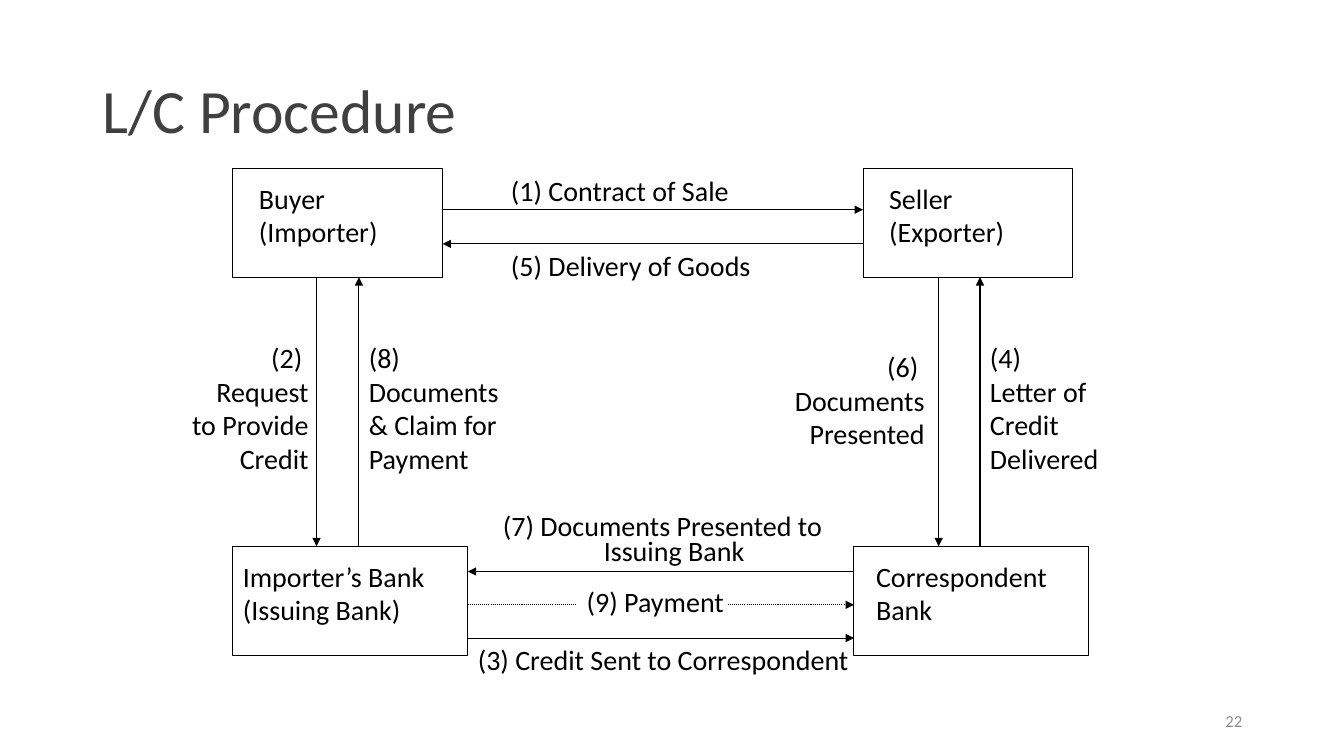
import pptx
import pptx.dml.color
import pptx.enum.dml
import pptx.enum.shapes
import pptx.enum.text
import pptx.oxml
import pptx.util
from pptx.util import Inches

FONT = "Calibri"
BLACK = "000000"
LEFT = pptx.enum.text.PP_ALIGN.LEFT
RIGHT = pptx.enum.text.PP_ALIGN.RIGHT
TOP = pptx.enum.text.MSO_ANCHOR.TOP
MIDDLE = pptx.enum.text.MSO_ANCHOR.MIDDLE

# Shared edges of the diagram, in inches
BUYER_RIGHT, SELLER_LEFT = 4.39, 8.56
ISSUER_RIGHT, CORRESPONDENT_LEFT = 4.64, 8.47
TOP_ROW, BOTTOM_ROW, PARTY_HEIGHT = 1.67, 5.42, 1.08
TOP_ROW_END = TOP_ROW + PARTY_HEIGHT

# Box left, box width, text left, text top, text width, lines
PARTIES = [
    (2.31, 2.08, TOP_ROW, 2.47, 1.39, ["Buyer", "(Importer)"]),
    (SELLER_LEFT, 2.08, TOP_ROW, 8.72, 1.35, ["Seller", "(Exporter)"]),
    (2.31, 2.33, BOTTOM_ROW, 2.31, 2.02, ["Importer’s Bank", "(Issuing Bank)"]),
    (CORRESPONDENT_LEFT, 2.33, BOTTOM_ROW, 8.59, 1.91, ["Correspondent", "Bank"]),
]

# Start x, start y, end x, end y
ARROWS = [
    (BUYER_RIGHT, 2.08, SELLER_LEFT, 2.08),
    (SELLER_LEFT, 2.42, BUYER_RIGHT, 2.42),
    (3.56, BOTTOM_ROW, 3.56, TOP_ROW_END),
    (3.14, TOP_ROW_END, 3.14, BOTTOM_ROW),
    (ISSUER_RIGHT, 6.33, CORRESPONDENT_LEFT, 6.33),
    (CORRESPONDENT_LEFT, 5.67, ISSUER_RIGHT, 5.67),
    (9.31, TOP_ROW_END, 9.31, BOTTOM_ROW),
    (9.72, BOTTOM_ROW, 9.72, TOP_ROW_END),
]

# Left, top, width, height, alignment, lines
STEPS = [
    (4.97, 1.67, 2.4, 0.43, LEFT, ["(1) Contract of Sale"]),
    (4.97, 2.42, 2.66, 0.43, LEFT, ["(5) Delivery of Goods"]),
    (4.64, 6.33, 3.92, 0.44, LEFT, ["(3) Credit Sent to Correspondent"]),
    (7.77, 3.42, 1.5, 1.11, RIGHT, ["(6) ", "Documents", "Presented"]),
    (9.72, 3.33, 1.3, 1.43, LEFT, ["(4)", "Letter of", "Credit", "Delivered"]),
    (3.56, 3.33, 1.56, 1.43, LEFT, ["(8)", "Documents", "& Claim for", "Payment"]),
    (1.79, 3.33, 1.37, 1.45, RIGHT, ["(2) ", "Request", "to Provide", "Credit"]),
    (5.72, 5.75, 1.56, 0.43, LEFT, ["(9) Payment"]),
]


def color(hex_value):
    return pptx.dml.color.RGBColor.from_string(hex_value)


def add_text(slide, left, top, width, height, lines, align=LEFT, size=20,
             fill=BLACK, anchor=TOP, wrap=False):
    """Add a text box with one paragraph per line and return its text frame."""
    box = slide.shapes.add_textbox(
        Inches(left), Inches(top), Inches(width), Inches(height))
    frame = box.text_frame
    frame.word_wrap = wrap
    frame.vertical_anchor = anchor
    if not wrap:
        frame.auto_size = pptx.enum.text.MSO_AUTO_SIZE.SHAPE_TO_FIT_TEXT
    for index, line in enumerate(lines):
        para = frame.add_paragraph() if index else frame.paragraphs[0]
        para.alignment = align
        span = para.add_run()
        span.text = line
        span.font.name = FONT
        span.font.size = pptx.util.Pt(size)
        span.font.color.rgb = color(fill)
    return frame


def style_line(line):
    line.color.rgb = color(BLACK)
    line.width = pptx.util.Pt(0.75)


def add_party(slide, left, width, top, text_left, text_width, lines):
    box = slide.shapes.add_shape(
        pptx.enum.shapes.MSO_SHAPE.RECTANGLE,
        Inches(left), Inches(top), Inches(width), Inches(PARTY_HEIGHT))
    box.shadow.inherit = False
    box.fill.background()
    style_line(box.line)
    add_text(slide, text_left, top + 0.08, text_width, 0.77, lines)


def add_line(slide, start_x, start_y, end_x, end_y, arrow=True, dotted=False):
    line = slide.shapes.add_connector(
        pptx.enum.shapes.MSO_CONNECTOR.STRAIGHT,
        Inches(start_x), Inches(start_y), Inches(end_x), Inches(end_y))
    style_line(line.line)
    if dotted:
        line.line.dash_style = pptx.enum.dml.MSO_LINE.ROUND_DOT
    properties = line._element.spPr
    if arrow:
        head = pptx.oxml.parse_xml(
            '<a:tailEnd xmlns:a="http://schemas.openxmlformats.org/drawingml/2006/main"'
            ' type="triangle"/>')
        line.line._get_or_add_ln().append(head)
    properties.append(pptx.oxml.parse_xml(
        '<a:effectLst xmlns:a="http://schemas.openxmlformats.org/drawingml/2006/main"/>'))


def add_issuing_step(slide):
    """Add step 7, whose second line is indented and set tight."""
    frame = add_text(slide, 4.89, 5, 3.4, 0.69,
                     ["(7) Documents Presented to", "Issuing Bank"])
    second = frame.paragraphs[1]
    second.line_spacing = 0.7
    second._p.get_or_add_pPr().set("marL", str(Inches(1)))


def main():
    deck = pptx.Presentation()
    deck.slide_width = Inches(13.33)
    deck.slide_height = Inches(7.5)
    page = deck.slides.add_slide(deck.slide_layouts[6])

    title = add_text(page, 0.92, 0.4, 11.5, 1.45, ["L/C Procedure"],
                     size=44, fill="404041", anchor=MIDDLE, wrap=True)
    title.paragraphs[0].line_spacing = 0.9
    for party in PARTIES:
        add_party(page, *party)
    for arrow in ARROWS:
        add_line(page, *arrow)
    for left, top, width, height, align, lines in STEPS:
        add_text(page, left, top, width, height, lines, align)
    add_issuing_step(page)
    add_line(page, ISSUER_RIGHT, 6, 5.72, 6, arrow=False, dotted=True)
    add_line(page, 7.22, 6, CORRESPONDENT_LEFT, 6, dotted=True)
    add_text(page, 9.42, 6.95, 3, 0.4, ["22"], RIGHT, size=12,
             fill="8C8C8C", anchor=MIDDLE, wrap=True)
    deck.save("out.pptx")


if __name__ == "__main__":
    main()
